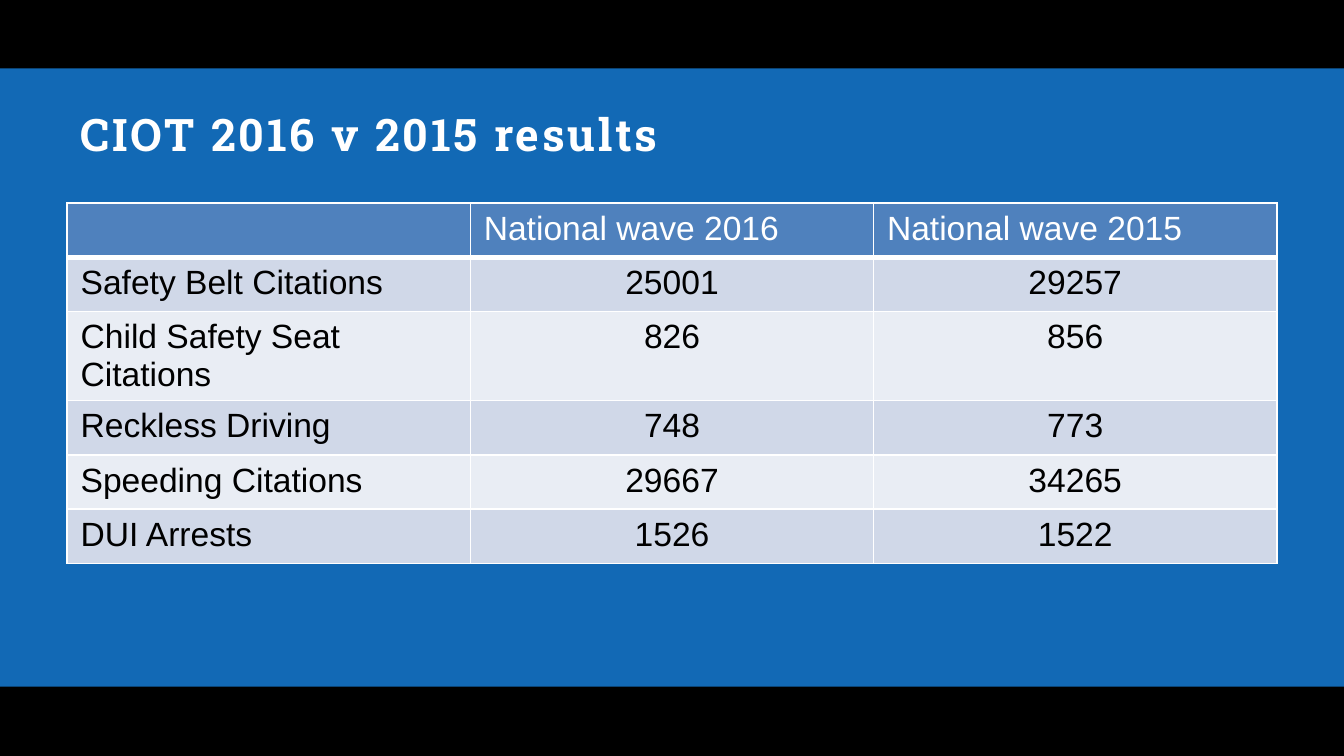
from dataclasses import dataclass

from lxml import etree
from pptx import Presentation
from pptx import util as u
from pptx.dml.color import RGBColor
from pptx.enum import shapes, text
from pptx.oxml.ns import qn


@dataclass(frozen=True)
class Theme:
    backdrop: str = "000000"
    band: str = "1269B5"
    header: str = "4F81BD"
    stripes: tuple = ("D0D8E8", "E9EDF4")
    light: str = "FFFFFF"
    dark: str = "000000"
    title_font: str = "Roboto Slab"
    body_font: str = "Arial"
    title_size: int = 24
    body_size: int = 18
    title_spacing: float = 1.5
    rule: int = 1
    header_rule: int = 3


SLIDE_WIDTH = 10
SLIDE_HEIGHT = SLIDE_WIDTH * 9 / 16
HEADINGS = ("", "National wave 2016", "National wave 2015")
RESULTS = (
    ("Safety Belt Citations", 25001, 29257),
    ("Child Safety Seat Citations", 826, 856),
    ("Reckless Driving", 748, 773),
    ("Speeding Citations", 29667, 34265),
    ("DUI Arrests", 1526, 1522),
)


class SlideBuilder:
    def __init__(self, page, theme):
        self.page = page
        self.theme = theme

    def paint(self, fill, color):
        fill.solid()
        fill.fore_color.rgb = RGBColor.from_string(color)

    def style(self, font, name, size, color, bold=False):
        font.name = name
        font.size = u.Pt(size)
        font.bold = bold
        font.color.rgb = RGBColor.from_string(color)

    def background(self):
        self.paint(self.page.background.fill, self.theme.backdrop)

    def band(self, left, top, width, height):
        """Add a full colour panel behind everything else."""
        panel = self.page.shapes.add_shape(
            shapes.MSO_SHAPE.RECTANGLE, *map(u.Inches, (left, top, width, height)))
        panel.shadow.inherit = False
        self.paint(panel.fill, self.theme.band)
        panel.line.fill.background()
        self.page.shapes._spTree.insert(2, panel._element)

    def title(self, words, left, top, width, height):
        box = self.page.shapes.title
        box.left, box.top, box.width, box.height = map(
            u.Inches, (left, top, width, height))
        frame = box.text_frame
        frame.text = words
        frame.word_wrap = True
        frame.auto_size = text.MSO_AUTO_SIZE.NONE
        frame.vertical_anchor = text.MSO_ANCHOR.TOP
        para = frame.paragraphs[0]
        para.alignment = text.PP_ALIGN.LEFT
        span = para.runs[0]
        self.style(span.font, self.theme.title_font, self.theme.title_size,
                   self.theme.light, bold=True)
        span.font._element.set("spc", str(int(self.theme.title_spacing * 100)))

    def borders(self, cell, **widths):
        """Draw the cell's borders; call before filling, as lines precede fills."""
        properties = cell._tc.get_or_add_tcPr()
        for side, width in widths.items():
            line = etree.SubElement(properties, qn(f"a:ln{side}"), w=str(u.Pt(width)))
            fill = etree.SubElement(line, qn("a:solidFill"))
            etree.SubElement(fill, qn("a:srgbClr"), val=self.theme.light)

    def cell(self, cell, value, row):
        theme = self.theme
        is_header = row == 0
        thin = theme.rule
        self.borders(cell, L=thin, R=thin,
                     T=theme.header_rule if row == 1 else thin,
                     B=theme.header_rule if is_header else thin)
        self.paint(cell.fill, theme.header if is_header else theme.stripes[(row - 1) % 2])
        cell.text_frame.text = str(value)
        para = cell.text_frame.paragraphs[0]
        is_number = isinstance(value, int)
        para.alignment = text.PP_ALIGN.CENTER if is_number else text.PP_ALIGN.LEFT
        for target in (para, *para.runs):
            self.style(target.font, theme.body_font, theme.body_size,
                       theme.light if is_header else theme.dark)

    def table(self, rows, left, top, width, height):
        """Add a table whose rows share the height evenly."""
        table = self.page.shapes.add_table(
            len(rows), len(rows[0]),
            *map(u.Inches, (left, top, width, height))).table
        for row, values in enumerate(rows):
            for column, value in enumerate(values):
                self.cell(table.cell(row, column), value, row)


def main():
    deck = Presentation()
    deck.slide_width = u.Inches(SLIDE_WIDTH)
    deck.slide_height = u.Inches(SLIDE_HEIGHT)
    title_only = deck.slide_layouts[5]
    builder = SlideBuilder(deck.slides.add_slide(title_only), Theme())
    builder.background()
    builder.band(0, 0.51, SLIDE_WIDTH, 4.6)
    builder.title("CIOT 2016 v 2015 results", 0.5, 0.74, 9, 0.73)
    builder.table((HEADINGS, *RESULTS), 0.5, 1.51, 9, 2.43)
    deck.save("out.pptx")


if __name__ == "__main__":
    main()
